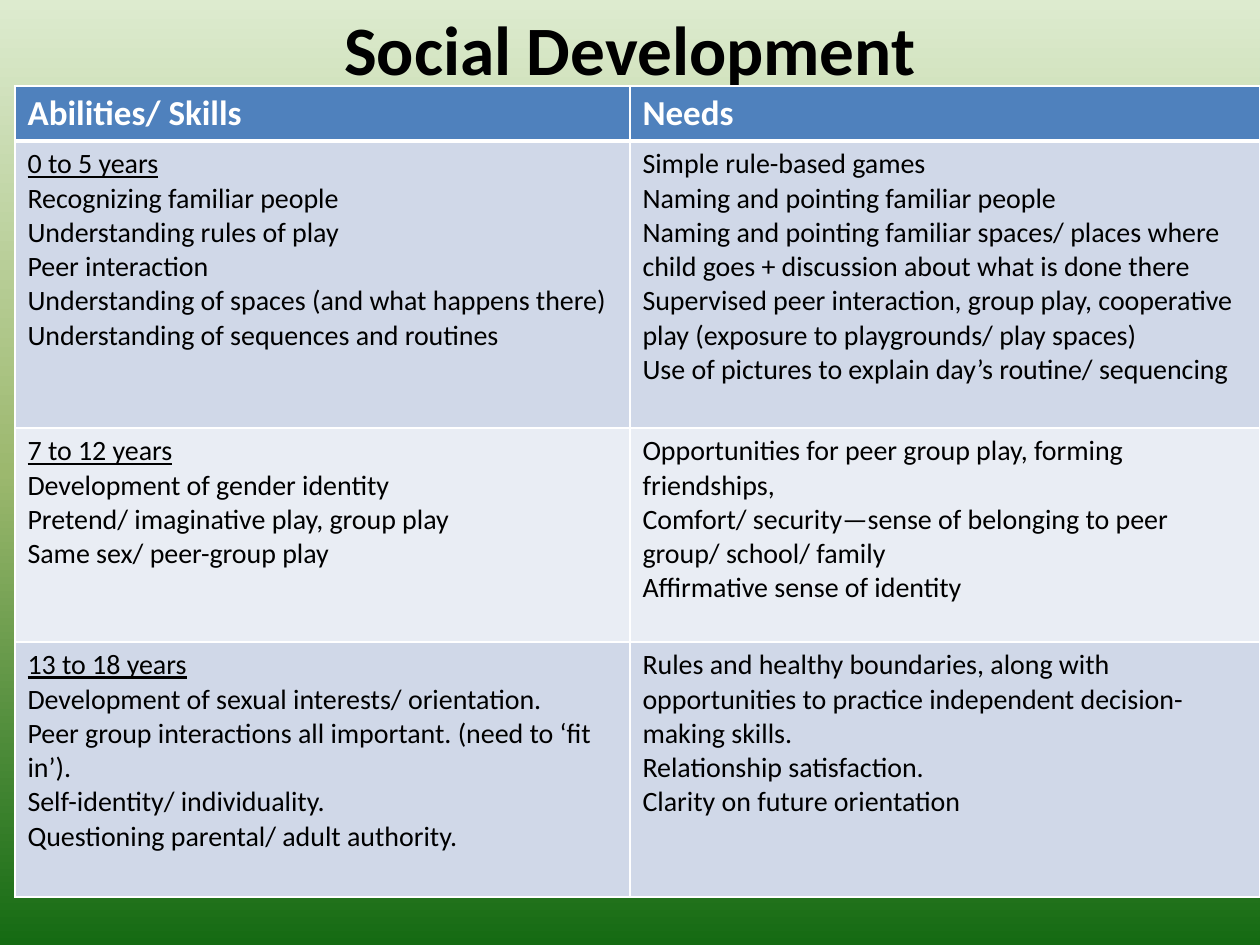
from dataclasses import dataclass

from lxml import etree
from pptx import Presentation
from pptx.dml.color import RGBColor
from pptx.enum.text import MSO_ANCHOR, PP_ALIGN
from pptx.oxml.ns import qn
from pptx.util import Pt

MIDDLE = MSO_ANCHOR.MIDDLE
CENTER = PP_ALIGN.CENTER

EMU_PER_PX = 914400 / 126
FONT = "Calibri"
BLACK = "000000"
WHITE = "FFFFFF"
HEADER_FILL = "4F81BD"
BAND_FILLS = ("D0D8E8", "E9EDF4")
GRADIENT_STOPS = ((0, "DDEBCF"), (50, "9CB86E"), (100, "156B13"))
COLUMN_WIDTHS = (615, 630)
HEADER_HEIGHT = 55


@dataclass
class AgeGroup:
    ages: str
    height: int
    skills: list[str]
    needs: list[str]


AGE_GROUPS = [
    AgeGroup(
        "0 to 5 years", 287,
        ["Recognizing familiar people",
         "Understanding rules of play",
         "Peer interaction",
         "Understanding of spaces (and what happens there)",
         "Understanding of sequences and routines"],
        ["Simple rule-based games",
         "Naming and pointing familiar people",
         "Naming and pointing familiar spaces/ places where child goes "
         "+ discussion about what is done there",
         "Supervised peer interaction, group play, cooperative play "
         "(exposure to playgrounds/ play spaces)",
         "Use of pictures to explain day’s routine/ sequencing"]),
    AgeGroup(
        "7 to 12 years", 214,
        ["Development of gender identity",
         "Pretend/ imaginative play, group play",
         "Same sex/ peer-group play"],
        ["Opportunities for peer group play, forming friendships,",
         "Comfort/ security—sense of belonging to peer group/ school/ family",
         "Affirmative sense of identity"]),
    AgeGroup(
        "13 to 18 years", 255,
        ["Development of sexual interests/ orientation.",
         "Peer group interactions all important. (need to ‘fit in’).",
         "Self-identity/ individuality.",
         "Questioning parental/ adult authority."],
        ["Rules and healthy boundaries, along with opportunities to practice "
         "independent decision-making skills.",
         "Relationship satisfaction.",
         "Clarity on future orientation"]),
]


def px(length: int) -> int:
    return round(length * EMU_PER_PX)


def rgb(color: str) -> RGBColor:
    return RGBColor.from_string(color)


def write_lines(frame, lines: list[str], size: float, color: str, bold: bool) -> None:
    frame.text = "\n".join(lines)
    for para in frame.paragraphs:
        for span in para.runs:
            span.font.name = FONT
            span.font.size = Pt(size)
            span.font.bold = bold
            span.font.color.rgb = rgb(color)


def paint_background(page) -> None:
    fill = page.background.fill
    fill.gradient()
    fill.gradient_angle = 270
    stops = page.element.find(".//" + qn("a:gsLst"))
    for stop in list(stops):
        stops.remove(stop)
    for percent, color in GRADIENT_STOPS:
        stop = etree.SubElement(stops, qn("a:gs"), pos=str(percent * 1000))
        etree.SubElement(stop, qn("a:srgbClr"), val=color)


def add_title(page, text: str) -> None:
    box = page.shapes.add_textbox(0, 0, px(1260), px(96))
    frame = box.text_frame
    frame.word_wrap = True
    frame.vertical_anchor = MIDDLE
    write_lines(frame, [text], 39.6, BLACK, True)
    frame.paragraphs[0].alignment = CENTER


def add_borders(cell, top: int, bottom: int) -> None:
    properties = cell._tc.get_or_add_tcPr()
    for side, points in (("L", 1), ("R", 1), ("T", top), ("B", bottom)):
        line = etree.SubElement(properties, qn(f"a:ln{side}"), w=str(Pt(points)))
        solid = etree.SubElement(line, qn("a:solidFill"))
        etree.SubElement(solid, qn("a:srgbClr"), val=WHITE)


def fill_cell(cell, fill: str, top: int = 1, bottom: int = 1) -> None:
    add_borders(cell, top, bottom)
    cell.fill.solid()
    cell.fill.fore_color.rgb = rgb(fill)


def add_age_table(page) -> None:
    heights = [HEADER_HEIGHT] + [group.height for group in AGE_GROUPS]
    table = page.shapes.add_table(
        len(heights), len(COLUMN_WIDTHS), px(15), px(86),
        px(sum(COLUMN_WIDTHS)), px(sum(heights))).table
    for column, width in zip(table.columns, COLUMN_WIDTHS):
        column.width = px(width)
    for row, height in zip(table.rows, heights):
        row.height = px(height)

    # Header row
    for cell, heading in zip(table.rows[0].cells, ("Abilities/ Skills", "Needs")):
        write_lines(cell.text_frame, [heading], 20, WHITE, True)
        fill_cell(cell, HEADER_FILL, bottom=3)

    # One banded row for each age group
    for index, group in enumerate(AGE_GROUPS):
        cells = table.rows[index + 1].cells
        for cell, lines in zip(cells, ([group.ages] + group.skills, group.needs)):
            write_lines(cell.text_frame, lines, 16, BLACK, False)
            fill_cell(cell, BAND_FILLS[index % 2], top=3 if index == 0 else 1)
        cells[0].text_frame.paragraphs[0].runs[0].font.underline = True


def main() -> None:
    deck = Presentation()
    deck.slide_width, deck.slide_height = px(1260), px(945)
    page = deck.slides.add_slide(deck.slide_layouts[6])
    paint_background(page)
    add_title(page, "Social Development")
    add_age_table(page)
    deck.save("out.pptx")


if __name__ == "__main__":
    main()
